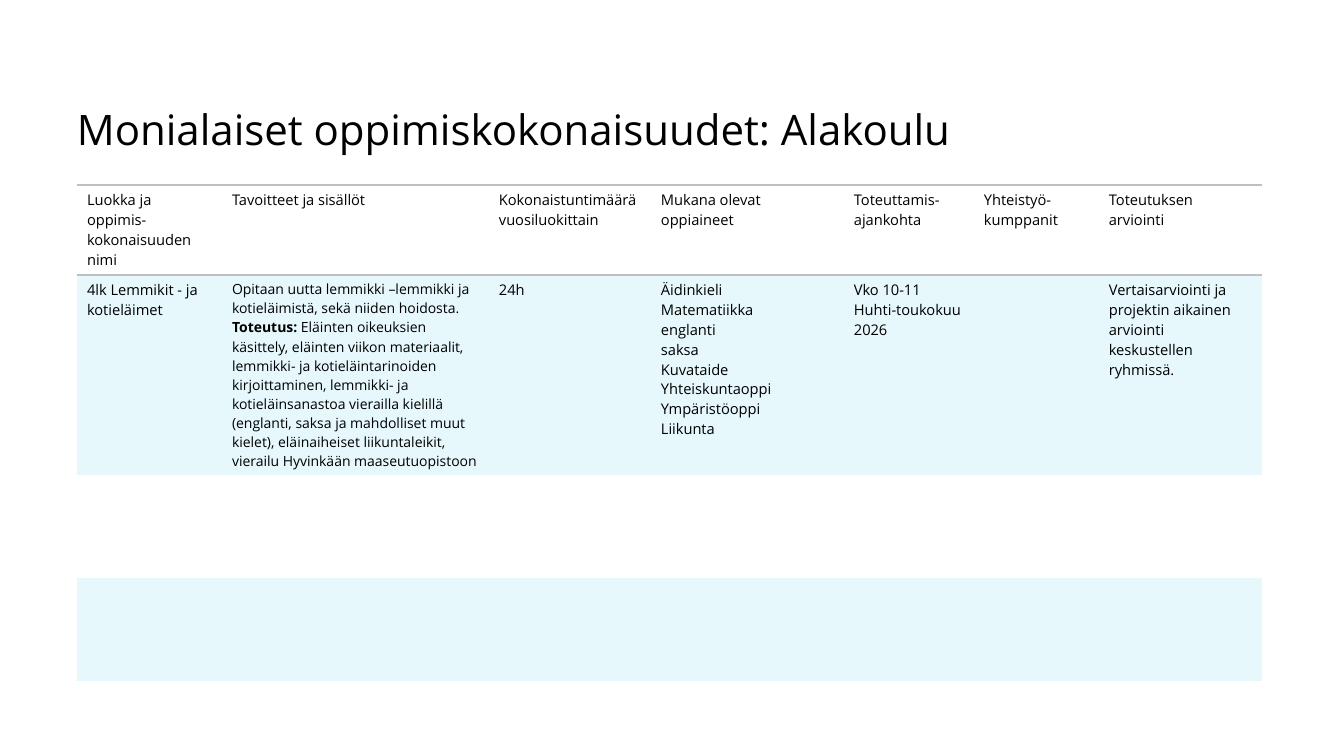
from lxml import etree
from pptx import Presentation
from pptx.dml.color import RGBColor
from pptx.enum.text import MSO_ANCHOR
from pptx.oxml import parse_xml
from pptx.oxml.ns import nsdecls, qn
from pptx.util import Emu, Pt

FONT = "Open Sans"
BLACK, RULE, BAND = "000000", "BFBFBF", "E6F8FC"
NO_STYLE = "{2D5ABB26-0587-4C30-8999-92F81FD0307C}"


def px(n):
    """Pixels to EMU, at 100.8 pixels to the inch."""
    return Emu(round(n * 914400 / 100.8))


def style(font, size, bold=False):
    font.name, font.size, font.bold = FONT, Pt(size), bold
    font.color.rgb = RGBColor.from_string(BLACK)


prs = Presentation()
prs.slide_width, prs.slide_height = px(1344), px(756)
s = prs.slides.add_slide(prs.slide_layouts[6])

# Title
tf = s.shapes.add_textbox(px(77), px(60), px(1033), px(95)).text_frame
tf.word_wrap = True
tf.vertical_anchor = MSO_ANCHOR.BOTTOM
tf.margin_left = tf.margin_right = tf.margin_top = tf.margin_bottom = 0
p = tf.paragraphs[0]
p.text = "Monialaiset oppimiskokonaisuudet: Alakoulu"
p.line_spacing = 0.9
style(p.runs[0].font, 30)

# Table: a line break in a cell starts a new paragraph
HEADER = [
    "Luokka ja oppimis-kokonaisuuden nimi",
    "Tavoitteet ja sisällöt",
    "Kokonaistuntimäärä vuosiluokittain",
    "Mukana olevat oppiaineet",
    "Toteuttamis-ajankohta",
    "Yhteistyö-kumppanit",
    "Toteutuksen arviointi",
]
PETS = [
    "4lk Lemmikit - ja kotieläimet",
    "Opitaan uutta lemmikki –lemmikki ja kotieläimistä, sekä niiden hoidosta.\n"
    "Toteutus: Eläinten oikeuksien käsittely, eläinten viikon materiaalit, "
    "lemmikki- ja kotieläintarinoiden kirjoittaminen, lemmikki- ja "
    "kotieläinsanastoa vierailla kielillä (englanti, saksa ja mahdolliset muut "
    "kielet), eläinaiheiset liikuntaleikit, vierailu Hyvinkään maaseutuopistoon",
    "24h",
    "Äidinkieli\nMatematiikka\nenglanti\nsaksa\nKuvataide\n"
    "Yhteiskuntaoppi\nYmpäristöoppi\nLiikunta",
    "Vko 10-11\nHuhti-toukokuu\n2026",
    "",
    "Vertaisarviointi ja projektin aikainen arviointi keskustellen ryhmissä.",
]
EMPTY = [""] * len(HEADER)
ROWS = [HEADER, PETS, EMPTY, EMPTY, EMPTY]
COL_WIDTHS = [145, 267, 162, 193, 130, 125, 163]
ROW_HEIGHTS = [90, 200, 103, 103, 85]
LEAD = "Toteutus: "

frame = s.shapes.add_table(len(ROWS), len(HEADER), px(77), px(185),
                           px(sum(COL_WIDTHS)), px(sum(ROW_HEIGHTS)))
table = frame.table
table.first_row = table.horz_banding = False
table._tbl.tblPr.find(qn("a:tableStyleId")).text = NO_STYLE
for col, width in zip(table.columns, COL_WIDTHS):
    col.width = px(width)
for row, height in zip(table.rows, ROW_HEIGHTS):
    row.height = px(height)

for i, texts in enumerate(ROWS):
    for j, text in enumerate(texts):
        cell = table.cell(i, j)
        if i == 0:
            for side in ("lnT", "lnB"):
                cell._tc.get_or_add_tcPr().append(parse_xml(
                    f'<a:{side} {nsdecls("a")} w="12700"><a:solidFill>'
                    f'<a:srgbClr val="{RULE}"/></a:solidFill></a:{side}>'))
        if i % 2:
            cell.fill.solid()
            cell.fill.fore_color.rgb = RGBColor.from_string(BAND)
        else:
            cell.fill.background()

        size = 10 if (i, j) == (1, 1) else 10.5
        cell.text_frame.text = text
        for p in cell.text_frame.paragraphs:
            if p.text.startswith(LEAD):
                rest = p.text[len(LEAD):]
                p.text = LEAD
                p.add_run().text = rest
            for r in p.runs:
                style(r.font, size, bold=r.text == LEAD)

prs.save("out.pptx")
